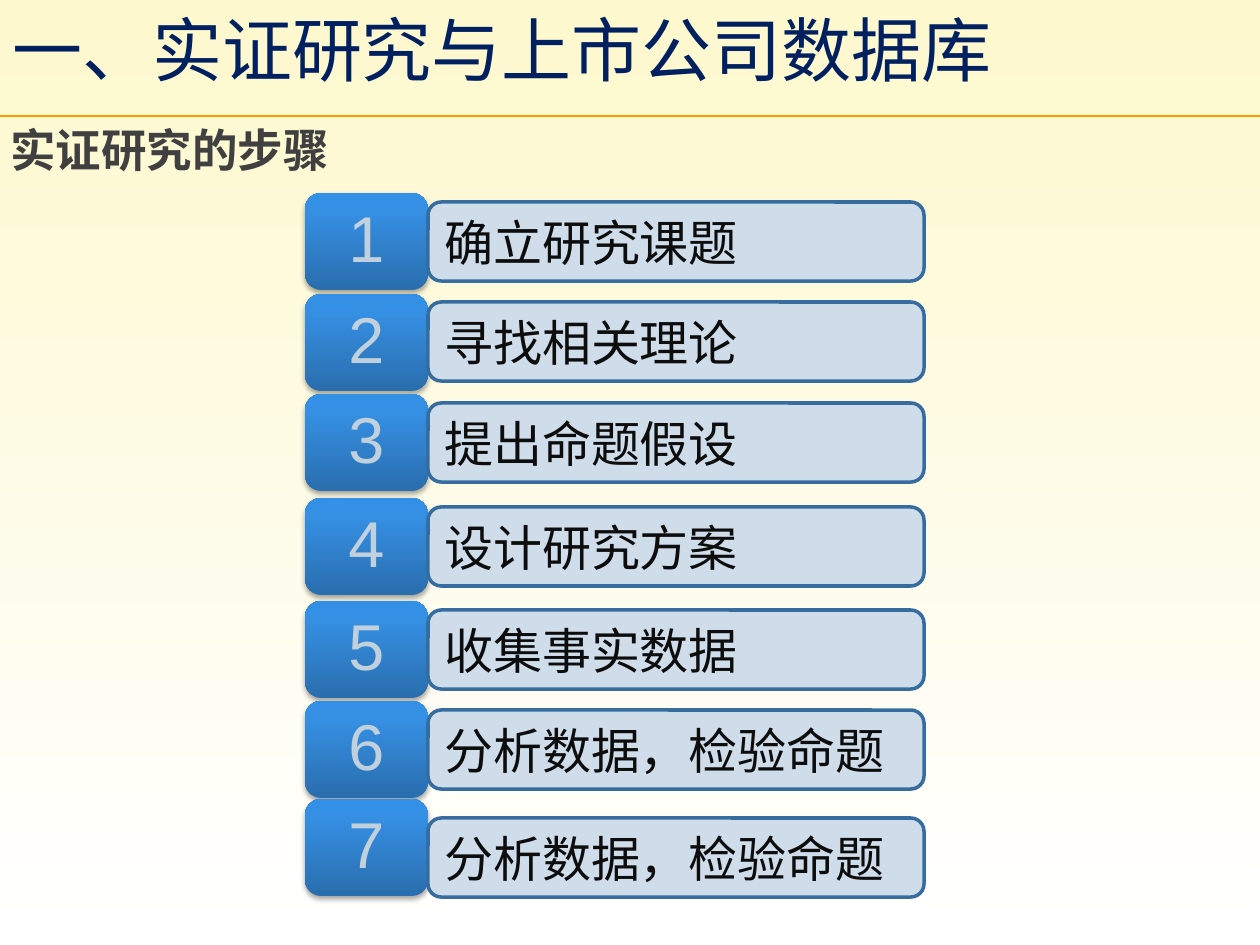
from copy import deepcopy
from dataclasses import dataclass

from lxml.etree import SubElement
from pptx import Presentation
from pptx.dml.color import RGBColor
from pptx.enum.shapes import MSO_CONNECTOR as CONN, MSO_SHAPE as SHAPE
from pptx.enum.text import MSO_ANCHOR as ANCHOR, MSO_AUTO_SIZE as AUTO, PP_ALIGN as ALIGN
from pptx.oxml.ns import qn
from pptx.util import Emu, Pt

PX_PER_INCH = 126
CJK, LATIN = "Noto Sans CJK SC", "Arial"

CREAM = RGBColor(0xFD, 0xF8, 0xCD)
WHITE = RGBColor(0xFF, 0xFF, 0xFF)
ORANGE = RGBColor(0xFF, 0x99, 0x00)
NAVY = RGBColor(0x00, 0x20, 0x60)
GRAY = RGBColor(0x40, 0x40, 0x40)
INK = RGBColor(0x0D, 0x0D, 0x0D)
PALE = RGBColor(0xC1, 0xD0, 0xDD)
BAR_FILL = RGBColor(0xCF, 0xDC, 0xEA)
BAR_LINE = RGBColor(0x37, 0x6D, 0x9E)
PAGE_STOPS = [(0, CREAM), (1, WHITE)]
BADGE_STOPS = [
    (0, RGBColor(0x29, 0x6E, 0xAE)),
    (0.8, RGBColor(0x35, 0x8F, 0xE2)),
    (1, RGBColor(0x32, 0x90, 0xE7)),
]


@dataclass
class Step:
    text: str
    badge_top: int
    bar_top: int


STEPS = [
    Step("确立研究课题", 193, 202),
    Step("寻找相关理论", 294, 302),
    Step("提出命题假设", 394, 403),
    Step("设计研究方案", 498, 507),
    Step("收集事实数据", 601, 610),
    Step("分析数据，检验命题", 701, 710),
    Step("分析数据，检验命题", 799, 818),
]

TITLE_FONT = {"size": Pt(40), "name": CJK}
HEADING_FONT = {"size": Pt(26), "name": CJK, "bold": True}
BAR_FONT = {"size": Pt(28), "name": CJK}
BADGE_FONT = {"size": Pt(37), "name": LATIN}


def px(n: int) -> Emu:
    return Emu(round(n * 914400 / PX_PER_INCH))


def set_gradient(fill, stops: list, angle: int) -> None:
    """Angle is counter-clockwise, in degrees."""
    fill.gradient()
    fill.gradient_angle = angle
    gs_list = fill.gradient_stops[0]._gs.getparent()
    for _ in stops[2:]:
        gs_list.append(deepcopy(gs_list[-1]))
    for stop, (position, color) in zip(fill.gradient_stops, stops):
        stop.position = position
        stop.color.rgb = color


def write(sp, text: str, font: dict, color: RGBColor, align=ALIGN.LEFT) -> None:
    p = sp.text_frame.paragraphs[0]
    p.alignment = align
    r = p.add_run()
    r.text = text
    for key, value in font.items():
        setattr(r.font, key, value)
    r.font.color.rgb = color
    SubElement(r._r.get_or_add_rPr(), qn("a:ea"), typeface=font["name"])


def add_label(s, box: tuple, text: str, font: dict, color: RGBColor) -> None:
    sp = s.shapes.add_textbox(*map(px, box))
    sp.text_frame.word_wrap = True
    sp.text_frame.auto_size = AUTO.SHAPE_TO_FIT_TEXT
    write(sp, text, font, color)


def add_round_rect(s, *box: int):
    sp = s.shapes.add_shape(SHAPE.ROUNDED_RECTANGLE, *map(px, box))
    sp.shadow.inherit = False
    sp.text_frame.word_wrap = True
    sp.text_frame.vertical_anchor = ANCHOR.MIDDLE
    return sp


def add_badge(s, number: int, top: int) -> None:
    sp = add_round_rect(s, 305, top, 123, 97)
    set_gradient(sp.fill, BADGE_STOPS, 90)
    sp.line.fill.background()
    effects = sp._element.spPr.find(qn("a:effectLst"))
    shadow = SubElement(effects, qn("a:outerShdw"), blurRad=str(Pt(3.1)),
                        dist=str(Pt(1.8)), dir="5400000", rotWithShape="0")
    black = SubElement(shadow, qn("a:srgbClr"), val="000000")
    SubElement(black, qn("a:alpha"), val="35000")
    write(sp, str(number), BADGE_FONT, PALE, ALIGN.CENTER)
    sp.text_frame.paragraphs[0].line_spacing = 0.9


def add_bar(s, text: str, top: int) -> None:
    sp = add_round_rect(s, 428, top, 496, 79)
    sp.fill.solid()
    sp.fill.fore_color.rgb = BAR_FILL
    sp.line.color.rgb = BAR_LINE
    sp.line.width = Pt(2)
    write(sp, text, BAR_FONT, INK)


def add_rule(s, y: int) -> None:
    line = s.shapes.add_connector(CONN.STRAIGHT, 0, px(y), px(1260), px(y))
    line.line.color.rgb = ORANGE
    line.line.width = Pt(1.5)
    SubElement(line._element.spPr, qn("a:effectLst"))


def main() -> None:
    prs = Presentation()
    prs.slide_width, prs.slide_height = px(1260), px(945)
    s = prs.slides.add_slide(prs.slide_layouts[6])
    set_gradient(s.background.fill, PAGE_STOPS, 270)

    # Heading area
    add_rule(s, 116)
    add_label(s, (-2, 116, 683, 68), "实证研究的步骤", HEADING_FONT, GRAY)
    add_label(s, (0, 0, 1207, 97), "一、实证研究与上市公司数据库", TITLE_FONT, NAVY)

    # Numbered steps
    for number, step in enumerate(STEPS, 1):
        add_badge(s, number, step.badge_top)
        add_bar(s, step.text, step.bar_top)

    prs.save("out.pptx")


if __name__ == "__main__":
    main()
